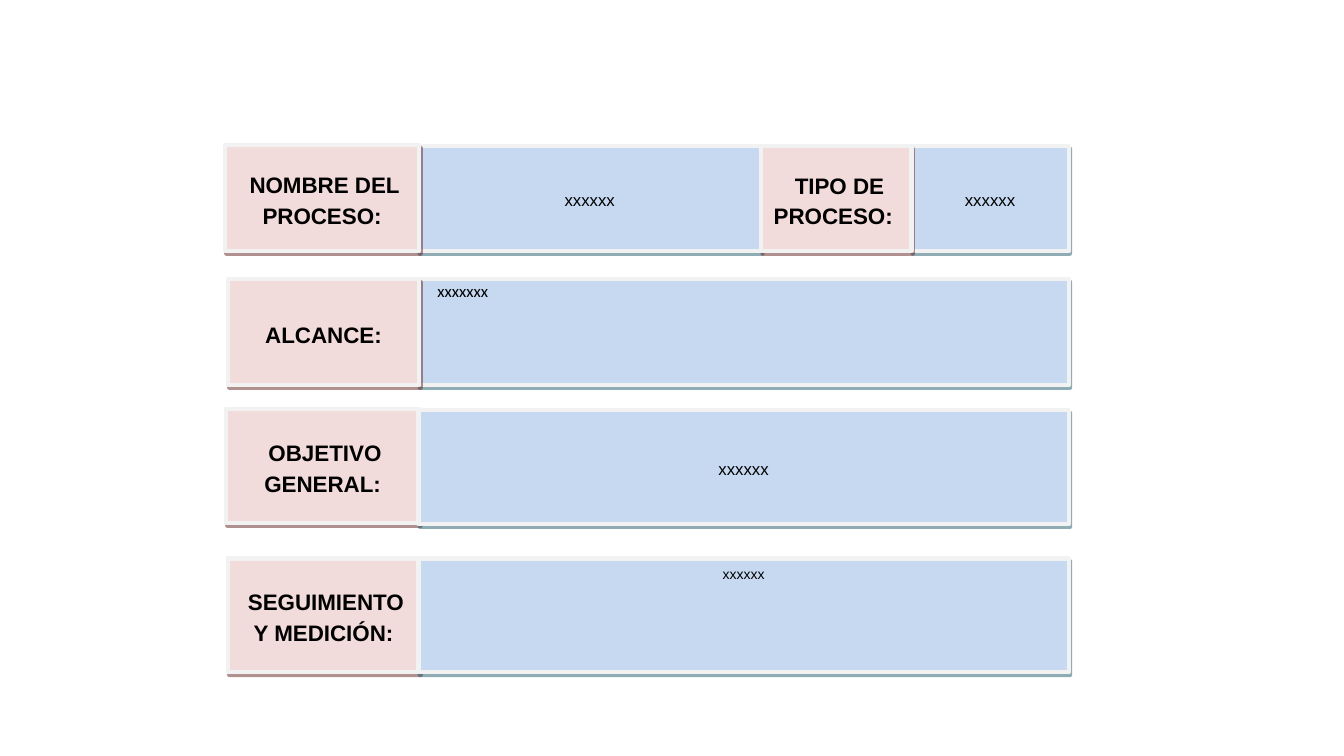
from lxml import etree
from pptx import Presentation
from pptx.dml.color import RGBColor
from pptx.enum import shapes, text
from pptx.oxml import ns
from pptx.util import Inches, Pt


def color(hex_text):
    return RGBColor.from_string(hex_text)


def write(paragraph, content, size=12, font="Arial", bold=False, fill="000000"):
    run = paragraph.add_run()
    run.text = content
    run.font.size = Pt(size)
    run.font.name = font
    run.font.bold = bold
    run.font.color.rgb = color(fill)


class ProcessSheet:
    BORDER = "F2F2F2"
    LABEL_FILL, LABEL_SHADOW = "F2DCDB", "632523"
    VALUE_FILL, VALUE_SHADOW = "C6D9F1", "215968"

    def __init__(self, presentation):
        self.slide = presentation.slides.add_slide(presentation.slide_layouts[6])

    def add_shadow(self, shape, hex_text):
        """Give the shape a hard, half-transparent shadow to the lower right."""
        properties = shape._element.spPr
        effects = properties.find(ns.qn("a:effectLst"))
        shadow = etree.SubElement(effects, ns.qn("a:outerShdw"), blurRad="0",
                                  dist=str(Pt(2.2)), dir=str(63 * 60000),
                                  algn="ctr", rotWithShape="0")
        tint = etree.SubElement(shadow, ns.qn("a:srgbClr"), val=hex_text)
        etree.SubElement(tint, ns.qn("a:alpha"), val="50000")

    def box(self, left, top, width, height, fill, shadow):
        shape = self.slide.shapes.add_shape(
            shapes.MSO_SHAPE.RECTANGLE,
            Inches(left), Inches(top), Inches(width), Inches(height))
        shape.fill.solid()
        shape.fill.fore_color.rgb = color(fill)
        shape.line.color.rgb = color(self.BORDER)
        shape.line.width = Pt(3)
        shape.shadow.inherit = False
        self.add_shadow(shape, shadow)
        shape.text_frame.word_wrap = True
        shape.text_frame.vertical_anchor = text.MSO_ANCHOR.MIDDLE
        paragraph = shape.text_frame.paragraphs[0]
        paragraph.alignment = text.PP_ALIGN.CENTER
        paragraph.line_spacing = 1.15
        return shape

    def label(self, left, top, width, height, runs, space_after=6):
        """Add a pink heading box; runs holds (text, size) pairs."""
        shape = self.box(left, top, width, height, self.LABEL_FILL, self.LABEL_SHADOW)
        paragraph = shape.text_frame.paragraphs[0]
        paragraph.space_after = Pt(space_after)
        for content, size in runs:
            write(paragraph, content, size=size, bold=True)

    def value(self, left, top, width, height, content="", size=12, space_after=6,
              anchor=text.MSO_ANCHOR.MIDDLE):
        shape = self.box(left, top, width, height, self.VALUE_FILL, self.VALUE_SHADOW)
        shape.text_frame.vertical_anchor = anchor
        if content:
            paragraph = shape.text_frame.paragraphs[0]
            paragraph.space_after = Pt(space_after)
            write(paragraph, content, size=size)

    def note(self, left, top, width, height, content):
        box = self.slide.shapes.add_textbox(
            Inches(left), Inches(top), Inches(width), Inches(height))
        box.text_frame.word_wrap = True
        box.text_frame.auto_size = text.MSO_AUTO_SIZE.SHAPE_TO_FIT_TEXT
        write(box.text_frame.paragraphs[0], content, font="Calibri")


def main():
    presentation = Presentation()
    presentation.slide_width = Inches(13.33)
    presentation.slide_height = Inches(7.5)
    sheet = ProcessSheet(presentation)
    value_left, value_width = 4.15, 6.45
    lead = (" ", 12)

    sheet.value(value_left, 2.77, value_width, 1.05)
    sheet.value(9.04, 1.45, 1.56, 1.04, "xxxxxx")
    sheet.value(value_left, 1.45, 3.4, 1.04, "xxxxxx")
    sheet.label(2.23, 1.44, 1.93, 1.05, [lead, ("NOMBRE DEL PROCESO:", 16)])
    sheet.label(7.55, 1.45, 1.49, 1.04, [(" TIPO DE PROCESO: ", 16)])
    sheet.label(2.26, 2.77, 1.9, 1.05, [lead, ("ALCANCE:", 16), lead], space_after=0)
    sheet.label(2.24, 4.06, 1.92, 1.13, [lead, ("OBJETIVO GENERAL:", 16)])
    sheet.value(value_left, 4.07, value_width, 1.13, "xxxxxx")
    sheet.label(2.26, 5.54, 1.9, 1.13, [lead, ("SEGUIMIENTO Y MEDICIÓN:", 16)])
    sheet.value(value_left, 5.54, value_width, 1.13, "xxxxxx", size=10,
                space_after=0, anchor=text.MSO_ANCHOR.TOP)
    sheet.note(4.24, 2.74, 6.27, 0.3, "xxxxxxx")

    presentation.save("out.pptx")


if __name__ == "__main__":
    main()
